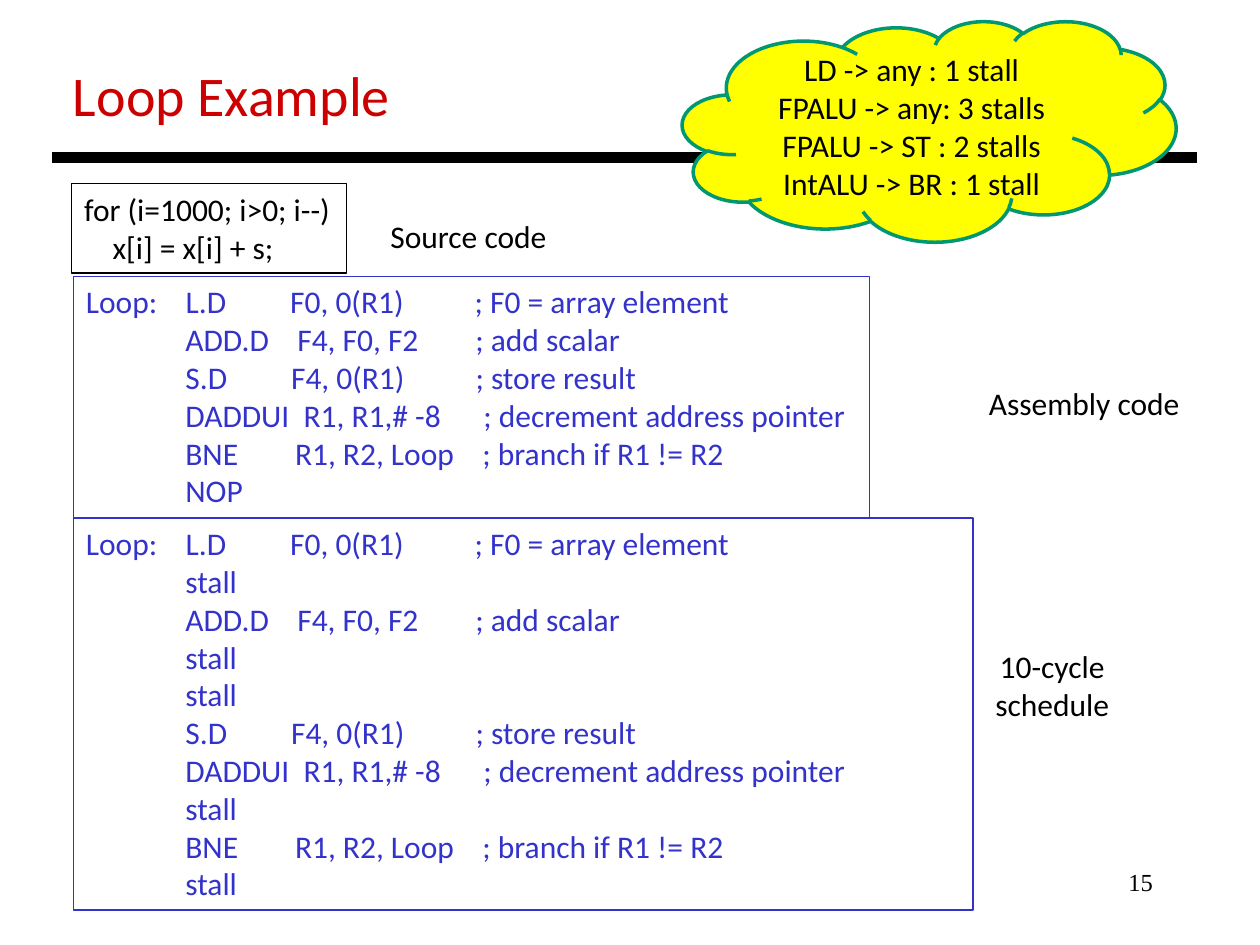
"""Build the Loop Example slide on pipeline stalls."""
from dataclasses import dataclass

from lxml import etree
from pptx import Presentation
from pptx.dml.color import RGBColor
from pptx.enum.shapes import MSO_CONNECTOR, MSO_SHAPE
from pptx.enum.text import MSO_ANCHOR, MSO_AUTO_SIZE, PP_ALIGN
from pptx.oxml.ns import qn
from pptx.util import Pt

LEFT, CENTER, RIGHT = PP_ALIGN.LEFT, PP_ALIGN.CENTER, PP_ALIGN.RIGHT
TOP, MIDDLE = MSO_ANCHOR.TOP, MSO_ANCHOR.MIDDLE
RECT, CLOUD = MSO_SHAPE.RECTANGLE, MSO_SHAPE.CLOUD
STRAIGHT = MSO_CONNECTOR.STRAIGHT
NO_FIT = MSO_AUTO_SIZE.NONE
TITLE_ONLY = 5


@dataclass(frozen=True)
class Theme:
    """Colours, fonts and type sizes."""
    black: str = "000000"
    red: str = "CC0000"
    blue: str = "3333CC"
    yellow: str = "FFFF00"
    green: str = "009771"
    font: str = "Calibri"
    number_font: str = "Times New Roman"
    title: int = 32
    body: int = 18
    number: int = 14


T = Theme()

TITLE = "Loop Example"
NUMBER = "15"
SOURCE = ["for (i=1000; i>0; i--)", "    x[i] = x[i] + s;"]
LOAD = "Loop:    L.D         F0, 0(R1)          ; F0 = array element"
ADD = "              ADD.D    F4, F0, F2        ; add scalar"
STORE = "              S.D         F4, 0(R1)          ; store result"
DECREMENT = "              DADDUI  R1, R1,# -8      ; decrement address pointer"
BRANCH = "              BNE        R1, R2, Loop    ; branch if R1 != R2"
NOP = "              NOP"
STALL = "              stall"
ASSEMBLY = [LOAD, ADD, STORE, DECREMENT, BRANCH, NOP]
SCHEDULE = [LOAD, STALL, ADD, STALL, STALL, STORE, DECREMENT, STALL, BRANCH, STALL]
STALL_RULES = ["LD -> any : 1 stall", "FPALU -> any: 3 stalls",
               "FPALU -> ST : 2 stalls", "IntALU -> BR : 1 stall"]

CODE_BOXES = [
    (SOURCE, (41, 105, 157, 51), T.black, False),
    (ASSEMBLY, (42, 157.8, 455, 138.2), T.blue, False),
    (SCHEDULE, (42, 296, 514, 224), T.blue, True),
]
LABELS = [
    (["Source code"], (216, 120.5, 105, 29), LEFT),
    (["Assembly code"], (558, 216, 124.5, 29), LEFT),
    (["10-cycle", "schedule"], (561, 366, 80.5, 51), CENTER),
]


def rgb(value):
    return RGBColor.from_string(value)


def write(s, lines, size=T.body, color=T.black, font=T.font,
          align=LEFT, anchor=TOP, wrap=False):
    """Fill a shape with one paragraph for each line."""
    tf = s.text_frame
    tf.auto_size = NO_FIT
    tf.word_wrap = wrap
    tf.vertical_anchor = anchor
    for i, line in enumerate(lines):
        p = tf.add_paragraph() if i else tf.paragraphs[0]
        p.alignment = align
        r = p.add_run()
        r.text = line
        r.font.name = font
        r.font.size = Pt(size)
        r.font.color.rgb = rgb(color)


def add_box(sp, kind, place, line, width, fill=None):
    s = sp.add_shape(kind, *map(Pt, place))
    s.shadow.inherit = False
    if fill:
        s.fill.solid()
        s.fill.fore_color.rgb = rgb(fill)
    else:
        s.fill.background()
    s.line.color.rgb = rgb(line)
    s.line.width = Pt(width)
    return s


def add_rule(sp, x1, x2, y):
    s = sp.add_connector(STRAIGHT, Pt(x1), Pt(y), Pt(x2), Pt(y))
    s.line.color.rgb = rgb(T.black)
    s.line.width = Pt(6)
    etree.SubElement(s._element.spPr, qn("a:effectLst"))


def main():
    prs = Presentation()
    prs.slide_width, prs.slide_height = Pt(720), Pt(540)
    sp = prs.slides.add_slide(prs.slide_layouts[TITLE_ONLY]).shapes

    s = sp.title
    s.left, s.top, s.width, s.height = map(Pt, (34.5, 31, 198, 46))
    write(s, [TITLE], size=T.title, color=T.red)

    s = sp.add_textbox(*map(Pt, (516, 492, 150, 36)))
    write(s, [NUMBER], size=T.number, font=T.number_font, align=RIGHT, wrap=True)

    add_rule(sp, 30, 684, 90)
    for lines, place, color, wrap in CODE_BOXES:
        s = add_box(sp, RECT, place, color, 0.75)
        write(s, lines, color=color, wrap=wrap)
    for lines, place, align in LABELS:
        write(sp.add_textbox(*map(Pt, place)), lines, align=align)

    s = add_box(sp, CLOUD, (390, 12, 282, 126), T.green, 2, fill=T.yellow)
    write(s, STALL_RULES, align=CENTER, anchor=MIDDLE, wrap=True)

    prs.save("out.pptx")


if __name__ == "__main__":
    main()
